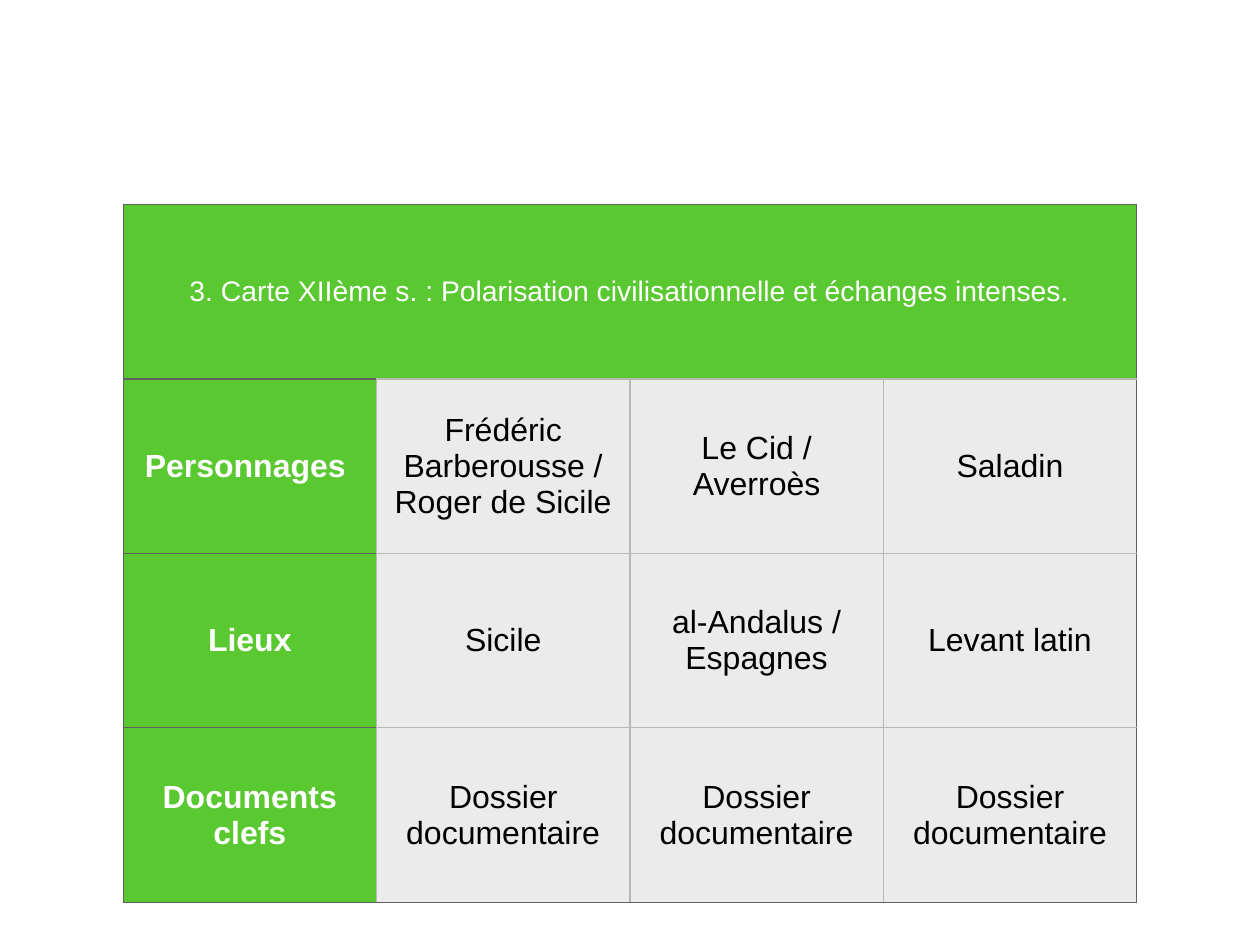
import pptx
import pptx.dml.color
import pptx.enum.text
import pptx.oxml
import pptx.oxml.ns
import pptx.util
import dataclasses

SCALE = 9144  # EMU in one px, at 100 px to the inch


@dataclasses.dataclass(frozen=True)
class Theme:
    green: str = "5AC831"
    gray: str = "EBEBEB"
    white: str = "FFFFFF"
    black: str = "000000"
    dark: str = "606060"
    light: str = "B8B8B8"
    font: str = "Arial"
    title: int = 23
    body: int = 26


THEME = Theme()
TITLE = "3. Carte XIIème s. : Polarisation civilisationnelle et échanges intenses."
ROWS = [
    [TITLE, "", "", ""],
    ["Personnages ", "Frédéric Barberousse / Roger de Sicile", "Le Cid / Averroès", "Saladin"],
    ["Lieux", "Sicile", "al-Andalus / Espagnes", "Levant latin"],
    ["Documents clefs"] + ["Dossier documentaire"] * 3,
]


def px(num):
    return pptx.util.Emu(num * SCALE)


def rgb(code):
    return pptx.dml.color.RGBColor.from_string(code)


def apply(item, values):
    for name, value in values.items():
        setattr(item, name, value)


def is_head(row, col):
    return row == 0 or col == 0


def draw_edges(cell, row, col):
    """Dark lines run round the table and between heads; others are light."""
    near = {"L": (row, col - 1), "R": (row, col + 1),
            "T": (row - 1, col), "B": (row + 1, col)}
    for side, (r, c) in near.items():
        outer = not (0 <= r < len(ROWS) and 0 <= c < len(ROWS[0]))
        heads = is_head(row, col) and is_head(r, c)
        color = THEME.dark if outer or heads else THEME.light
        cell._tc.get_or_add_tcPr().append(pptx.oxml.parse_xml(
            f'<a:ln{side} {pptx.oxml.ns.nsdecls("a")} w="12700">'
            f'<a:solidFill><a:srgbClr val="{color}"/></a:solidFill></a:ln{side}>'))


def fill_cell(cell, text, row, col):
    head = is_head(row, col)
    draw_edges(cell, row, col)
    cell.fill.solid()
    cell.fill.fore_color.rgb = rgb(THEME.green if head else THEME.gray)
    sides = ("margin_left", "margin_right", "margin_top", "margin_bottom")
    apply(cell, dict.fromkeys(sides, px(6)))
    cell.vertical_anchor = pptx.enum.text.MSO_ANCHOR.MIDDLE
    if not text:
        return
    para = cell.text_frame.paragraphs[0]
    para.alignment = pptx.enum.text.PP_ALIGN.CENTER
    run = para.add_run()
    run.text = text
    apply(run.font, {
        "name": THEME.font,
        "size": pptx.util.Pt(THEME.body if row else THEME.title),
        "bold": head and row > 0,
    })
    run.font.color.rgb = rgb(THEME.white if head else THEME.black)


def draw_table(slide, left, top, width, height):
    count, span = len(ROWS), len(ROWS[0])
    table = slide.shapes.add_table(
        count, span, px(left), px(top), px(width), px(height)).table
    apply(table, {"first_row": False, "horz_banding": False})
    for col in table.columns:
        col.width = px(width // span)
    for row in table.rows:
        row.height = px(height // count)
    for r, texts in enumerate(ROWS):
        for c, text in enumerate(texts):
            fill_cell(table.cell(r, c), text, r, c)
    table.cell(0, 0).merge(table.cell(0, span - 1))


def main():
    deck = pptx.Presentation()
    apply(deck, {"slide_width": px(1422), "slide_height": px(1067)})
    slide = deck.slides.add_slide(deck.slide_layouts[6])
    draw_table(slide, 139, 231, 1144, 788)
    deck.save("out.pptx")


if __name__ == "__main__":
    main()
